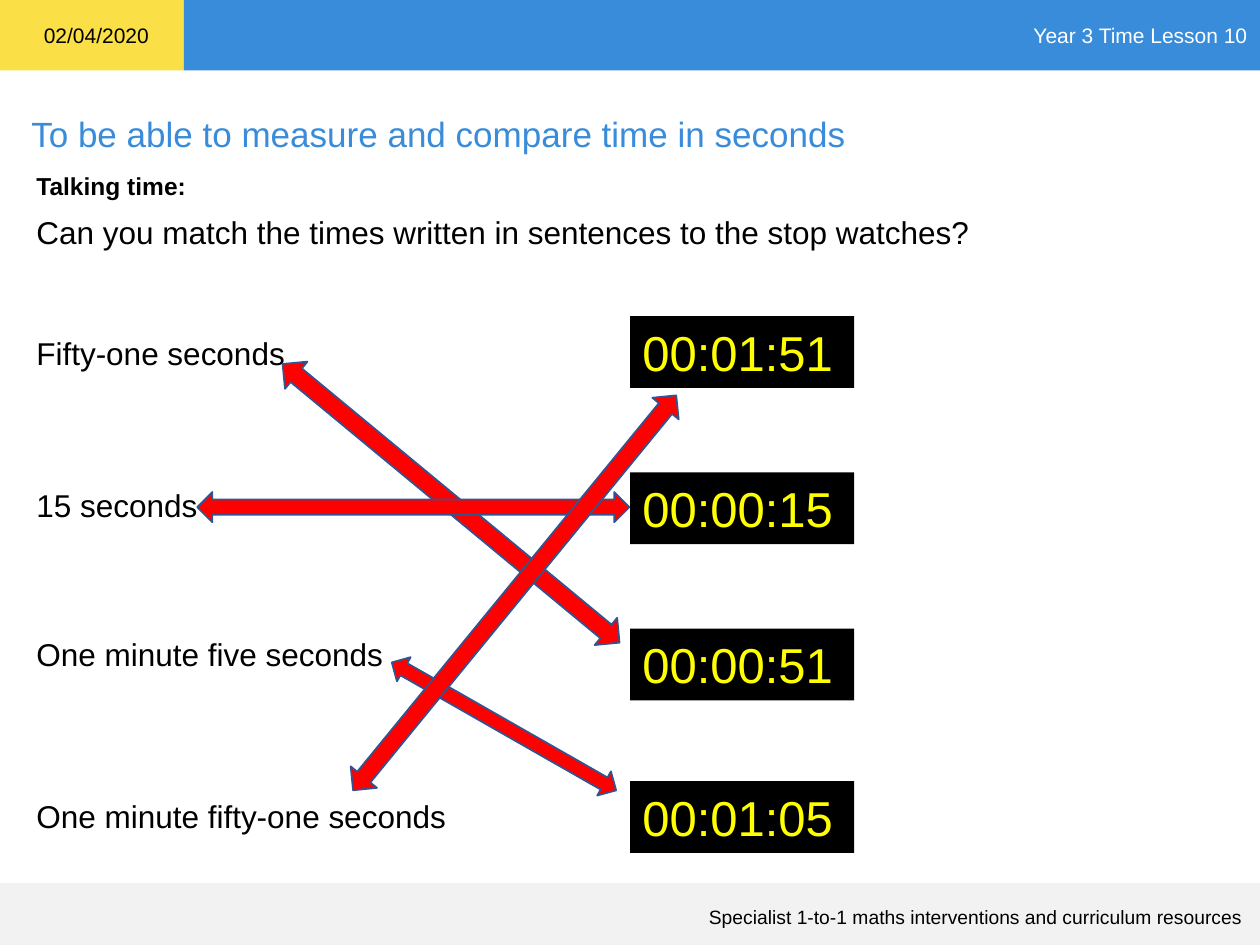
from pptx import Presentation
from pptx.dml.color import RGBColor
from pptx.enum.shapes import MSO_SHAPE
from pptx.enum.text import MSO_ANCHOR, PP_ALIGN
from pptx.util import Inches, Pt

RECT, ARROW = MSO_SHAPE.RECTANGLE, MSO_SHAPE.UP_DOWN_ARROW
LEFT, RIGHT = PP_ALIGN.LEFT, PP_ALIGN.RIGHT
TOP, MIDDLE = MSO_ANCHOR.TOP, MSO_ANCHOR.MIDDLE

THEME = {
    "font": "Arial",
    "blue": "388CDA", "yellow": "FADF47", "grey": "F2F2F2",
    "white": "FFFFFF", "black": "000000",
    "digits": "FFFF00", "arrow": "FF0000", "outline": "325491",
    "footer": 11, "header": 12, "label": 14, "body": 18, "title": 20, "watch": 28,
}

DATE = "02/04/2020"
LESSON = "Year 3 Time Lesson 10"
TITLE = "To be able to measure and compare time in seconds"
LABEL = "Talking time:"
QUESTION = "Can you match the times written in sentences to the stop watches?"
FOOTER = "Specialist 1-to-1\u00a0maths\u00a0interventions and curriculum resources".replace("\u00a0", " ")

SENTENCES = [
    ("Fifty-one seconds", 2.6),
    ("15 seconds", 3.81),
    ("One minute five seconds", 4.99),
    ("One minute fifty-one seconds", 6.28),
]
WATCHES = [("00:01:51", 2.51), ("00:00:15", 3.75), ("00:00:51", 4.99), ("00:01:05", 6.2)]
ARROWS = [
    (3.89, 4.74, 0.22, 2.05, 299.7),
    (3.44, 2.26, 0.28, 3.47, 129.6),
    (3.16, 2.31, 0.24, 3.43, 90),
    (3.95, 2.68, 0.27, 4.05, 39.3),
]


def color(name):
    return RGBColor.from_string(THEME[name])


def add_filled(s, kind, box, fill):
    sp = s.shapes.add_shape(kind, *map(Inches, box))
    sp.shadow.inherit = False
    sp.fill.solid()
    sp.fill.fore_color.rgb = color(fill)
    sp.line.fill.background()
    return sp


def write(sp, text, size, ink="black", align=LEFT, anchor=TOP, bold=False, wrap=True):
    tf = sp.text_frame
    tf.text = text
    tf.word_wrap = wrap
    tf.vertical_anchor = anchor
    p = tf.paragraphs[0]
    p.alignment = align
    font = p.runs[0].font
    font.name, font.size, font.bold = THEME["font"], Pt(THEME[size]), bold
    font.color.rgb = color(ink)


def add_text(s, box, text, size, **style):
    write(s.shapes.add_textbox(*map(Inches, box)), text, size, **style)


prs = Presentation()
prs.slide_width, prs.slide_height = Inches(10), Inches(7.5)
s = prs.slides.add_slide(prs.slide_layouts[6])

add_filled(s, RECT, (0, 0, 1.46, 0.56), "yellow")
banner = add_filled(s, RECT, (1.46, 0, 8.54, 0.56), "blue")
write(banner, LESSON, "header", ink="white", align=RIGHT, anchor=MIDDLE)
add_filled(s, RECT, (0, 7.01, 10, 0.49), "grey")
add_text(s, (0.42, 7.13, 9.54, 0.3), FOOTER, "footer", align=RIGHT, anchor=MIDDLE)
add_text(s, (0.15, 0.84, 9.71, 0.44), TITLE, "title", ink="blue")
add_text(s, (0.25, 0.13, 1.04, 0.3), DATE, "header", wrap=False)

for text, top in WATCHES:
    write(add_filled(s, RECT, (5, top, 1.78, 0.57), "black"), text, "watch", ink="digits")

for text, top in SENTENCES:
    add_text(s, (0.19, top, 4.25, 0.4), text, "body")

for *box, angle in ARROWS:
    arrow = add_filled(s, ARROW, box, "arrow")
    arrow.rotation = angle
    arrow.line.color.rgb = color("outline")
    arrow.line.width = Pt(1)

add_text(s, (0.19, 1.64, 9.61, 0.4), QUESTION, "body")
add_text(s, (0.19, 1.31, 1.39, 0.34), LABEL, "label", bold=True, wrap=False)

prs.save("out.pptx")
